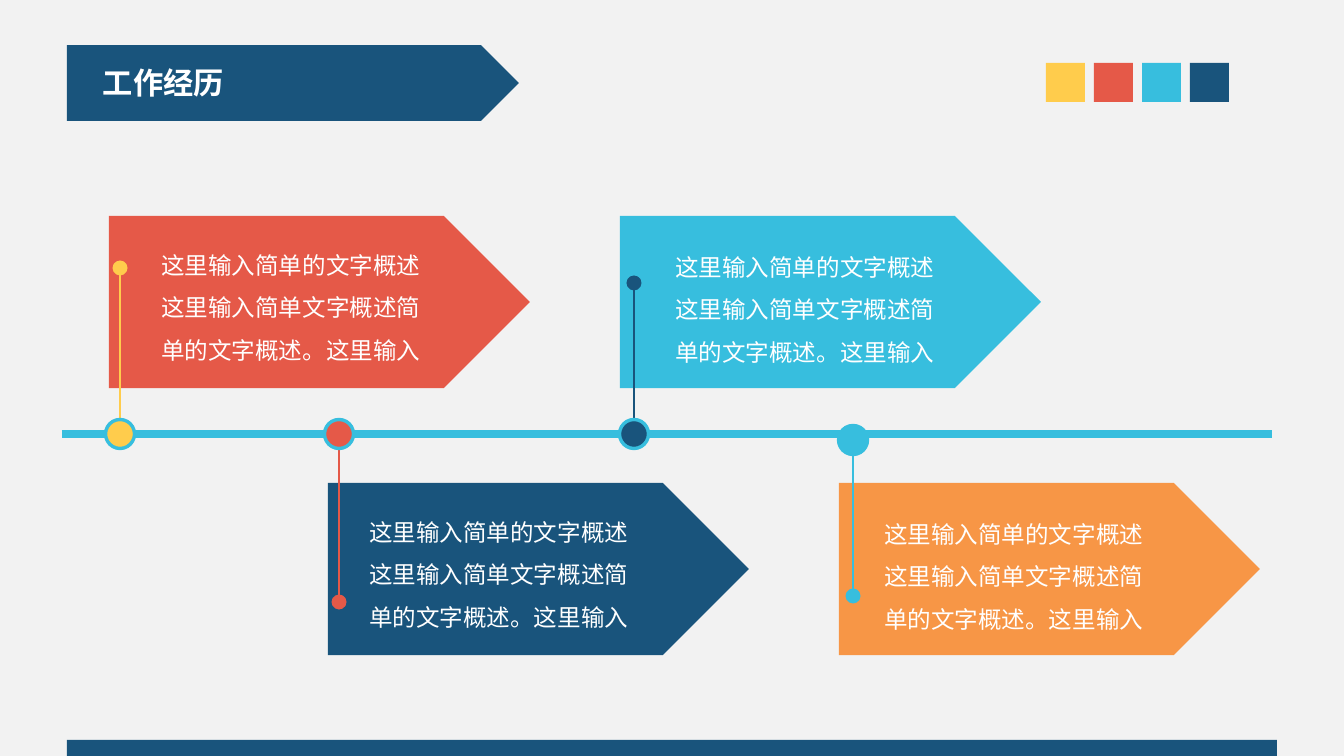
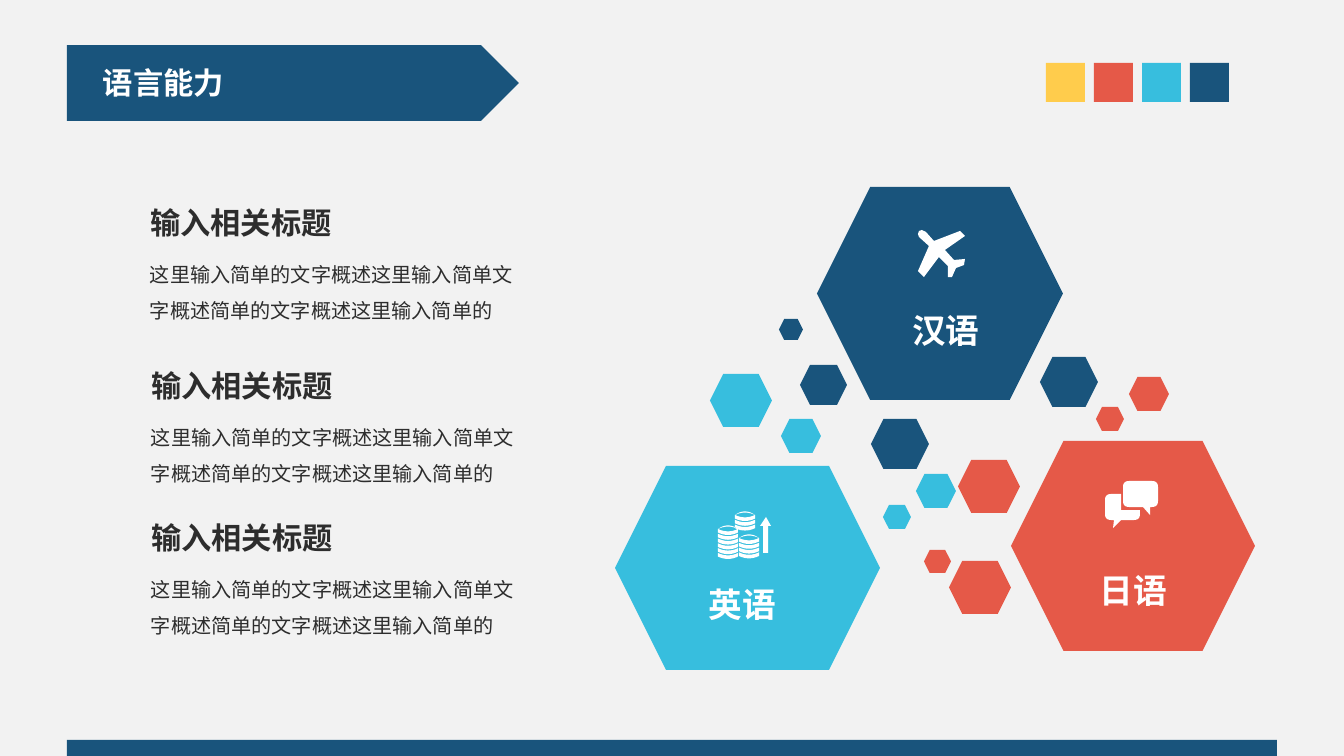
from math import hypot

from lxml import etree
from pptx import Presentation
from pptx.dml.color import RGBColor
from pptx.enum.shapes import MSO_CONNECTOR, MSO_SHAPE
from pptx.enum.text import MSO_ANCHOR, MSO_AUTO_SIZE, PP_ALIGN
from pptx.oxml.ns import qn
from pptx.util import Pt

PENTAGON, HEXAGON = MSO_SHAPE.PENTAGON, MSO_SHAPE.HEXAGON
RECT, OVAL = MSO_SHAPE.RECTANGLE, MSO_SHAPE.OVAL
STRAIGHT = MSO_CONNECTOR.STRAIGHT
LEFT, CENTER = PP_ALIGN.LEFT, PP_ALIGN.CENTER
TOP, MIDDLE = MSO_ANCHOR.TOP, MSO_ANCHOR.MIDDLE
NO_AUTOFIT = MSO_AUTO_SIZE.NONE

PX = 914400 / 121  # EMU in one px


class Theme:
    paper, white, ink = "F2F2F2", "FFFFFF", "2D2D2D"
    navy, cyan, red = "19547C", "37BEDE", "E55948"
    yellow, orange = "FFCC4C", "F79646"
    heading_font, body_font = "Noto Sans CJK SC", "Calibri"
    title = dict(size=18, color=white, bold=True, font=heading_font, anchor=MIDDLE)
    heading = dict(title, color=ink)
    body = dict(size=12, color=ink, spacing=1.5)
    card = dict(size=14, color=white, spacing=1.5, inset=(16, 8))
    label = dict(size=20, color=white, bold=True, align=CENTER, anchor=MIDDLE)


# Content shared by the slides
SLIDE_SIZE = (1344, 756)
BANNER = (67, 45, 452, 76)
TITLE_BOX = (91, 58, 146, 48)
FOOTER = (67, 740, 1210, 16)
SWATCHES = [Theme.yellow, Theme.red, Theme.cyan, Theme.navy]
SWATCH_LEFT, SWATCH_TOP, SWATCH_SIZE, SWATCH_STEP = 1046, 63, 39, 48

# Work experience: column, row, card fill, text offset, pin x, hub y, tip y, pin colour
CARD_TEXT = ["这里输入简单的文字概述", "这里输入简单文字概述简", "单的文字概述。这里输入"]
CARD_SIZE, CARD_TEXT_SIZE = (421, 172), (370, 144)
CARD_LEFT, CARD_TOP, COLUMN_STEP, ROW_SHIFT = 109, 216, 511, (219, 267)
AXIS = (62, 434, 1272, 434)
HUB_SIZE, TIP_SIZE = 29, 15
JOBS = [
    (0, 0, Theme.red, (36, 13), 120, 434, 268, Theme.yellow),
    (1, 0, Theme.cyan, (39, 15), 634, 434, 283, Theme.navy),
    (0, 1, Theme.navy, (25, 13), 339, 434, 602, Theme.red),
    (1, 1, Theme.orange, (29, 15), 853, 440, 596, Theme.cyan),
]

# Language skills
HEADING = "输入相关标题"
SUMMARY = "这里输入简单的文字概述这里输入简单文字概述简单的文字概述这里输入简单的"
SECTIONS = [(138, 198), (139, 361), (139, 513)]
SUMMARY_SHIFT = 46
SMALL_HEXAGONS = {  # left, top, width
    Theme.cyan: [(710, 374, 62), (781, 419, 40), (916, 474, 40), (883, 505, 28)],
    Theme.red: [(958, 460, 62), (949, 561, 62), (1129, 377, 40), (924, 550, 27),
                (1096, 407, 28)],
    Theme.navy: [(1040, 357, 58), (779, 319, 24), (800, 365, 47), (871, 419, 58)],
}
HEXAGON_RATIO = 0.86
LANGUAGES = [  # name, fill, hexagon, label box
    ("英语", Theme.cyan, (615, 466, 265, 204), (661, 578, 163, 53)),
    ("汉语", Theme.navy, (817, 187, 246, 213), (876, 304, 140, 53)),
    ("日语", Theme.red, (1011, 441, 244, 210), (1058, 564, 151, 53)),
]

# Icon outlines; a third number is a corner radius
PLANE = [(922, 230), (926, 232), (934, 241), (960, 231), (965, 236), (945, 250),
         (954, 260), (965, 259), (964, 265), (956, 268), (952, 277), (948, 277),
         (948, 266), (939, 257), (924, 277), (918, 271), (929, 246), (919, 237),
         (918, 234), (919, 231)]
BUBBLES = [
    [(1123, 481, 6), (1158, 481, 6), (1158, 507, 6), (1150, 507), (1150, 515),
     (1143, 507), (1123, 507, 6)],
    [(1105, 494, 6), (1121, 494), (1121, 510), (1140, 510), (1140, 520, 6),
     (1121, 520), (1113, 528), (1114, 520), (1105, 520, 6)],
]
COIN_STACKS = [(718, 529, 6), (739, 538, 4), (735, 515, 3)]  # left, top, coins
COIN_WIDTH, COIN_HEIGHT, COIN_SAG, COIN_STEP = 20, 3.6, 2.4, 4.8
ARROW = [(766, 517), (771, 526), (768, 526), (768, 553), (763, 553), (763, 526),
         (760, 526)]


def px(*lengths):
    return [round(length * PX) for length in lengths]


def rgb(value):
    return RGBColor.from_string(value)


def paint(shape, fill, outline=None, weight=2):
    shape.shadow.inherit = False
    shape.fill.solid()
    shape.fill.fore_color.rgb = rgb(fill)
    if outline:
        shape.line.color.rgb = rgb(outline)
        shape.line.width = Pt(weight)
    else:
        shape.line.fill.background()
    return shape


def add_block(slide, preset, box, fill, outline=None):
    return paint(slide.shapes.add_shape(preset, *px(*box)), fill, outline)


def add_line(slide, ends, color, weight):
    line = slide.shapes.add_connector(STRAIGHT, *px(*ends))
    line.line.color.rgb = rgb(color)
    line.line.width = Pt(weight)
    etree.SubElement(line.element.spPr, qn("a:effectLst"))


def write(holder, paragraphs, size, color, bold=False, font=Theme.body_font,
          align=LEFT, anchor=TOP, spacing=1.0, inset=(12, 6)):
    frame = holder.text_frame
    side, edge = px(*inset)
    frame_format = dict(word_wrap=True, auto_size=NO_AUTOFIT, vertical_anchor=anchor,
                        margin_left=side, margin_right=side,
                        margin_top=edge, margin_bottom=edge)
    for name, value in frame_format.items():
        setattr(frame, name, value)
    for index, text in enumerate(paragraphs):
        paragraph = frame.add_paragraph() if index else frame.paragraphs[0]
        paragraph.alignment, paragraph.line_spacing = align, spacing
        run = paragraph.add_run()
        run.text = text
        for name, value in dict(size=Pt(size), bold=bold, name=font).items():
            setattr(run.font, name, value)
        run.font.color.rgb = rgb(color)
        etree.SubElement(run._r.get_or_add_rPr(), qn("a:ea"), typeface=font)


def add_text(slide, box, paragraphs, style):
    write(slide.shapes.add_textbox(*px(*box)), paragraphs, **style)


def add_dot(slide, x, y, size, fill, outline=None):
    add_block(slide, OVAL, (x - size / 2, y - size / 2, size, size), fill, outline)


# Icons
def add_icon(slide, outlines):
    builder = None
    for outline in outlines:
        start, *rest = [px(*point) for point in outline]
        if builder is None:
            builder = slide.shapes.build_freeform(*start)
        else:
            builder.move_to(*start)
        builder.add_line_segments(rest, close=True)
    paint(builder.convert_to_shape(), Theme.white)


def round_corners(outline, steps=5):
    points = []
    for i, (x, y, *radius) in enumerate(outline):
        if not radius:
            points.append((x, y))
            continue
        ends = []
        for nx, ny, *_ in (outline[i - 1], outline[(i + 1) % len(outline)]):
            share = radius[0] / hypot(nx - x, ny - y)
            ends.append((x + (nx - x) * share, y + (ny - y) * share))
        (ax, ay), (bx, by) = ends
        for t in (step / steps for step in range(steps + 1)):
            a, c, b = (1 - t) ** 2, 2 * t * (1 - t), t * t
            points.append((a * ax + c * x + b * bx, a * ay + c * y + b * by))
    return points


def coin_band(left, upper, lower, upper_sag, lower_sag, steps=8):
    def arc(y, sag):
        return [(left + COIN_WIDTH * t, y + 4 * sag * t * (1 - t))
                for t in (step / steps for step in range(steps + 1))]
    return arc(upper, upper_sag) + arc(lower, lower_sag)[::-1]


def coin_outlines():
    outlines = [ARROW]
    for left, top, count in COIN_STACKS:
        outlines.append(coin_band(left, top, top, -COIN_HEIGHT, -COIN_SAG))
        for i in range(count):
            y = top + i * COIN_STEP
            outlines.append(coin_band(left, y, y + COIN_HEIGHT, COIN_SAG, COIN_SAG))
    return outlines


# Slides
def add_slide(prs, title):
    slide = prs.slides.add_slide(prs.slide_layouts[5])
    banner = add_block(slide, PENTAGON, BANNER, Theme.navy)
    holder = slide.shapes.title
    holder.left, holder.top, holder.width, holder.height = px(*TITLE_BOX)
    write(holder, [title], **Theme.title)
    banner.element.addnext(holder.element)  # title in front of its banner
    add_block(slide, RECT, FOOTER, Theme.navy)
    for i, color in enumerate(SWATCHES):
        box = (SWATCH_LEFT + i * SWATCH_STEP, SWATCH_TOP, SWATCH_SIZE, SWATCH_SIZE)
        add_block(slide, RECT, box, color)
    return slide


def build_experience(prs):
    slide = add_slide(prs, "工作经历")
    corners = [(CARD_LEFT + column * COLUMN_STEP + row * ROW_SHIFT[0],
                CARD_TOP + row * ROW_SHIFT[1]) for column, row, *_ in JOBS]
    for (left, top), job in zip(corners, JOBS):
        add_block(slide, PENTAGON, (left, top, *CARD_SIZE), job[2])
    add_line(slide, AXIS, Theme.cyan, 4.5)
    for (left, top), job in zip(corners, JOBS):
        (dx, dy), x, hub_y, tip_y, color = job[3:]
        add_line(slide, (x, hub_y, x, tip_y), color, 1.5)
        add_dot(slide, x, tip_y, TIP_SIZE, color)
        add_dot(slide, x, hub_y, HUB_SIZE, color, Theme.cyan)
        add_text(slide, (left + dx, top + dy, *CARD_TEXT_SIZE), CARD_TEXT, Theme.card)


def build_languages(prs):
    slide = add_slide(prs, "语言能力")
    for color, hexagons in SMALL_HEXAGONS.items():
        for left, top, width in hexagons:
            box = (left, top, width, round(width * HEXAGON_RATIO))
            add_block(slide, HEXAGON, box, color)
    for name, color, box, label_box in LANGUAGES:
        add_block(slide, HEXAGON, box, color)
        add_text(slide, label_box, [name], Theme.label)
    for outlines in (coin_outlines(), [PLANE], [round_corners(b) for b in BUBBLES]):
        add_icon(slide, outlines)
    for left, top in SECTIONS:
        add_text(slide, (left, top, 267, 48), [HEADING], Theme.heading)
        add_text(slide, (left, top + SUMMARY_SHIFT, 391, 86), [SUMMARY], Theme.body)


def main():
    prs = Presentation()
    prs.slide_width, prs.slide_height = px(*SLIDE_SIZE)
    backdrop = prs.slide_master.background.fill
    backdrop.solid()
    backdrop.fore_color.rgb = rgb(Theme.paper)
    build_experience(prs)
    build_languages(prs)
    prs.save("out.pptx")


if __name__ == "__main__":
    main()
